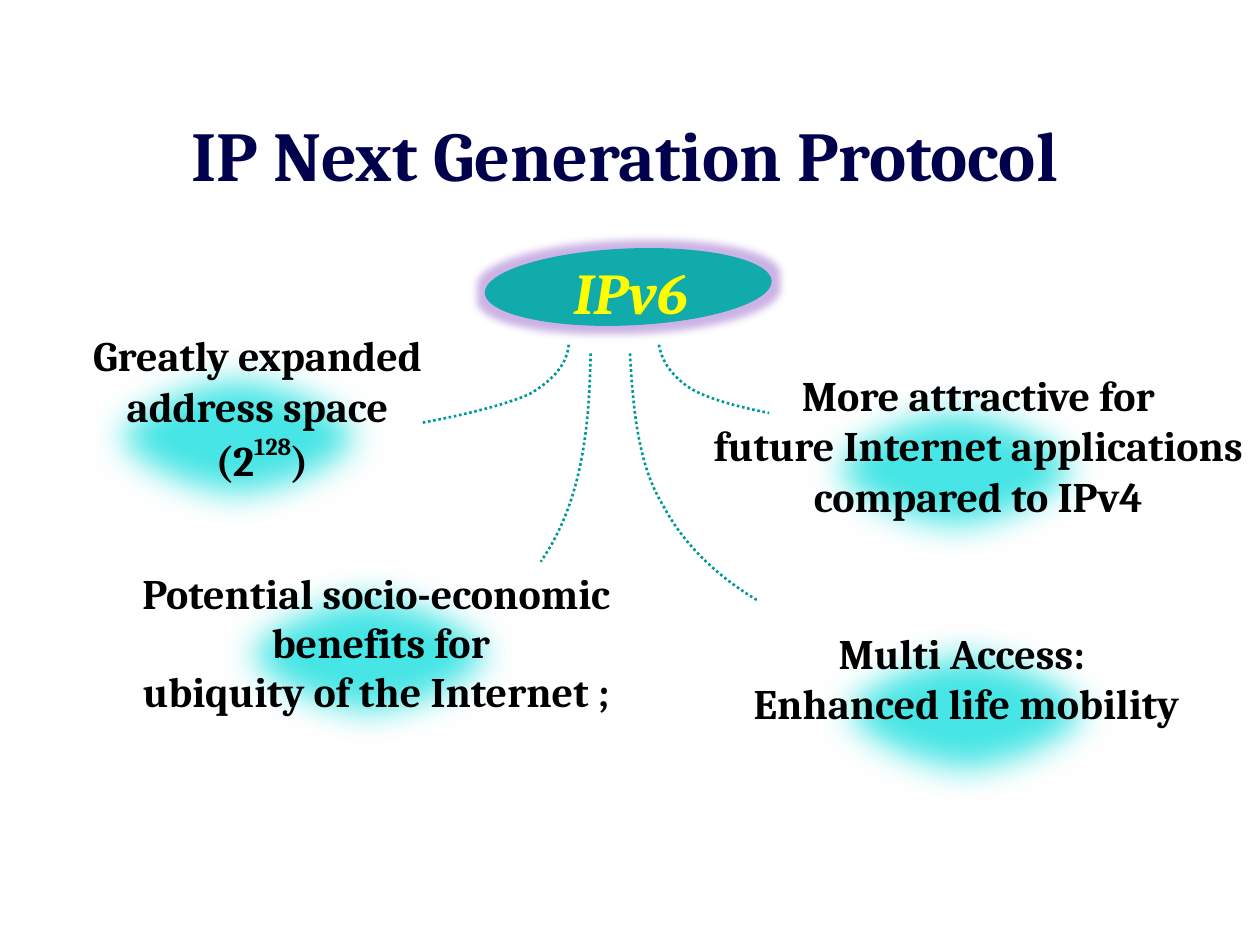
from lxml import etree
from pptx import Presentation
from pptx import util as u
from pptx.dml.color import RGBColor
from pptx.enum import dml, shapes, text
from pptx.oxml import parse_xml
from pptx.oxml.ns import nsdecls, qn

Pt = u.Pt


def rgb(value):
    return RGBColor.from_string(value)


def style(tf, size, color, italic=False):
    tf.margin_top = tf.margin_bottom = Pt(3.6)
    for p in tf.paragraphs:
        p.alignment = text.PP_ALIGN.CENTER
        p.font.name = "Cambria"
        p.font.size = Pt(size)
        p.font.bold = True
        p.font.italic = italic
        p.font.color.rgb = rgb(color)


prs = Presentation()
prs.slide_width, prs.slide_height = Pt(720), Pt(540)
s = prs.slides.add_slide(prs.slide_layouts[5])

title = s.shapes.title
title.left, title.top, title.width, title.height = Pt(93.5), Pt(60), Pt(527), Pt(55.5)
title.text_frame.text = "IP Next Generation Protocol"
title.text_frame.word_wrap = False
title.text_frame.vertical_anchor = text.MSO_ANCHOR.TOP
style(title.text_frame, 40, "00004C")

soft_edge = '<a:softEdge rad="254000"/>'
glow = '<a:glow rad="114300"><a:srgbClr val="9966CC"><a:alpha val="50000"/></a:srgbClr></a:glow>'
ellipses = [(x, y, 188, 106, 0, "47E5E5", soft_edge)
            for x, y in [(136, 249.5), (546, 268), (211, 374), (552, 407)]]
ellipses.append((359, 164, 164, 44, -2.4, "11ABAB", glow))
for x, y, w, h, angle, color, effect in ellipses:
    sp = s.shapes.add_shape(
        shapes.MSO_SHAPE.OVAL, Pt(x - w / 2), Pt(y - h / 2), Pt(w), Pt(h))
    sp.rotation = angle
    sp.fill.solid()
    sp.fill.fore_color.rgb = rgb(color)
    sp.line.fill.background()
    sp._element.spPr.append(
        parse_xml(f'<a:effectLst {nsdecls("a")}>{effect}</a:effectLst>'))

curves = [
    [(325, 197), (324, 207), (318, 216), (303, 225), (290, 231), (266, 237), (241.5, 241.5)],
    [(376.5, 197), (378, 205), (382, 213), (393, 221), (402, 227), (419, 232), (439.5, 236)],
    [(337.5, 202), (337, 226), (336, 238), (334, 252), (330, 280), (322, 302), (309, 321)],
    [(360, 202), (362, 240), (366, 268), (379, 289), (390, 310), (409, 329), (433.5, 343.5)],
]
for curve in curves:
    points = [(Pt(x), Pt(y)) for x, y in curve]
    builder = s.shapes.build_freeform(*points[0])
    builder.add_line_segments(points[1:], close=False)
    sp = builder.convert_to_shape()
    sp.shadow.inherit = False
    sp.fill.background()
    sp.line.color.rgb = rgb("009999")
    sp.line.width = Pt(1.5)
    sp.line.dash_style = dml.MSO_LINE.ROUND_DOT
    segments = list(sp._element.iter(qn("a:lnTo")))
    for i in range(0, len(segments), 3):
        bezier = etree.Element(qn("a:cubicBezTo"))
        segments[i].addprevious(bezier)
        for segment in segments[i:i + 3]:
            bezier.append(segment[0])
            segment.getparent().remove(segment)

labels = [
    (42.5, 185, 214.5, 93.5, False, ["Greatly expanded ", "address space \v(2"]),
    (398, 207.5, 322, 93.5, False,
     ["More attractive for", "future Internet applications", "compared to IPv4"]),
    (68.5, 326.5, 293, 88.5, False,
     ["Potential socio-economic", " benefits for", "ubiquity of the Internet ;"]),
    (416.5, 355, 271.5, 65, True, ["Multi Access: ", "Enhanced life mobility"]),
]
boxes = []
for x, y, w, h, wrap, lines in labels:
    tf = s.shapes.add_textbox(Pt(x), Pt(y), Pt(w), Pt(h)).text_frame
    tf.word_wrap = wrap
    tf.text = "\n".join(lines)
    style(tf, 24, "000000")
    boxes.append(tf)

address, _, benefits, _ = boxes
p = address.paragraphs[1]
r = p.add_run()
r.text = "128"
r.font._element.set("baseline", "50000")
p.add_run().text = ")"
for p in benefits.paragraphs:
    p.line_spacing = 0.8
    p.space_before = Pt(4.8)

tf = s.shapes.add_textbox(Pt(178.5), Pt(143), Pt(364), Pt(47)).text_frame
tf.word_wrap = True
tf.vertical_anchor = text.MSO_ANCHOR.MIDDLE
tf.text = "IPv6"
style(tf, 33, "FFFF00", italic=True)

prs.save("out.pptx")
